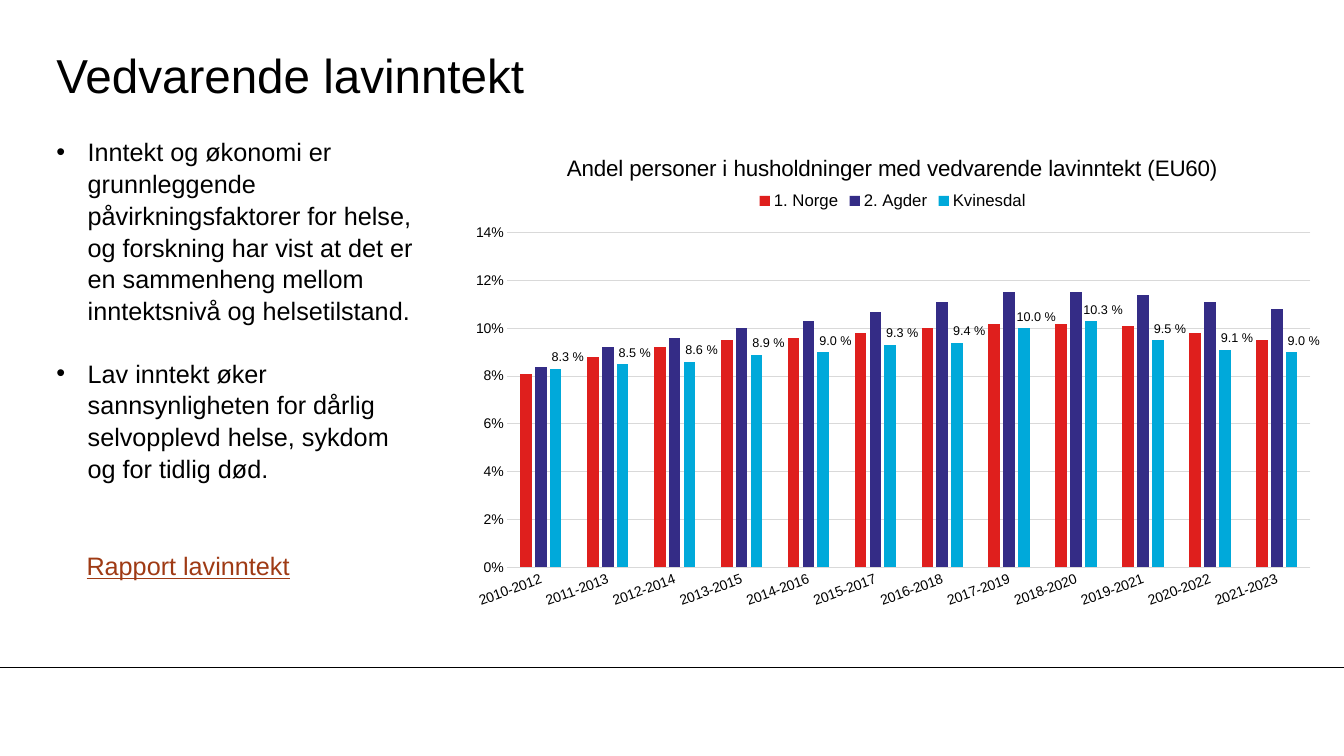
from dataclasses import dataclass

import pptx
import pptx.chart.data
import pptx.dml.color
import pptx.enum.chart
import pptx.enum.shapes
import pptx.enum.text
import pptx.oxml
import pptx.oxml.ns
import pptx.util

Inches = pptx.util.Inches
Pt = pptx.util.Pt

FONT = "Arial"
COLORS = {
    "text": "000000",
    "link": "9F3A14",
    "grid": "D9D9D9",
    "norge": "DF1F1D",
    "agder": "342C86",
    "kvinesdal": "00A9DA",
}


@dataclass
class Series:
    name: str
    color: str
    percents: list[float]


SERIES = [
    Series("1. Norge", "norge",
           [8.1, 8.8, 9.2, 9.5, 9.6, 9.8, 10, 10.2, 10.2, 10.1, 9.8, 9.5]),
    Series("2. Agder", "agder",
           [8.4, 9.2, 9.6, 10, 10.3, 10.7, 11.1, 11.5, 11.5, 11.4, 11.1, 10.8]),
    Series("Kvinesdal", "kvinesdal",
           [8.3, 8.5, 8.6, 8.9, 9, 9.3, 9.4, 10, 10.3, 9.5, 9.1, 9]),
]
PERIODS = [f"{year}-{year + 2}" for year in range(2010, 2022)]
BULLETS = [
    "Inntekt og økonomi er grunnleggende påvirkningsfaktorer for helse, "
    "og forskning har vist at det er en sammenheng mellom inntektsnivå og helsetilstand.",
    "Lav inntekt øker sannsynligheten for dårlig selvopplevd helse, "
    "sykdom og for tidlig død.",
]


def rgb(key: str) -> pptx.dml.color.RGBColor:
    return pptx.dml.color.RGBColor.from_string(COLORS[key])


def set_all(obj, values: dict) -> None:
    for name, value in values.items():
        setattr(obj, name, value)


def set_font(font, size: float, color: str = "text", **extra) -> None:
    set_all(font, {"name": FONT, "size": Pt(size), "bold": False, **extra})
    font.color.rgb = rgb(color)


def place(sp, left: float, top: float, width: float, height: float) -> None:
    set_all(sp, {"left": Inches(left), "top": Inches(top),
                 "width": Inches(width), "height": Inches(height)})


def add_bullet(p) -> None:
    pPr = p._p.get_or_add_pPr()
    pPr.set("marL", str(Inches(0.31)))
    pPr.set("indent", str(-Inches(0.31)))
    pPr.append(pptx.oxml.parse_xml(
        f'<a:buChar {pptx.oxml.ns.nsdecls("a")} char="•"/>'))


def make_layout(target: str = "", mode: str = "edge", **sizes: float):
    inner = f'<c:layoutTarget val="{target}"/>' if target else ""
    if mode == "edge":
        inner += '<c:xMode val="edge"/><c:yMode val="edge"/>'
    inner += "".join(f'<c:{k} val="{v}"/>' for k, v in sizes.items())
    return pptx.oxml.parse_xml(
        f'<c:layout {pptx.oxml.ns.nsdecls("c")}>'
        f"<c:manualLayout>{inner}</c:manualLayout></c:layout>")


def set_layout(parent, before: str, layout) -> None:
    for old in parent.xpath("c:layout"):
        parent.remove(old)
    parent.xpath(before)[0].addprevious(layout)


def add_title(slide) -> None:
    sp = slide.shapes.title
    place(sp, 0.56, 0.36, 11.1, 0.75)
    tf = sp.text_frame
    tf.text = "Vedvarende lavinntekt"
    set_all(tf, {"margin_left": 0, "margin_right": 0, "margin_top": 0,
                 "margin_bottom": 0, "word_wrap": True,
                 "auto_size": pptx.enum.text.MSO_AUTO_SIZE.NONE,
                 "vertical_anchor": pptx.enum.text.MSO_ANCHOR.MIDDLE})
    p = tf.paragraphs[0]
    p.alignment = pptx.enum.text.PP_ALIGN.LEFT
    set_font(p.runs[0].font, 34)


def add_body(slide) -> None:
    sp = slide.placeholders[1]
    place(sp, 0.46, 1.29, 3.83, 3.43)
    tf = sp.text_frame
    tf.auto_size = pptx.enum.text.MSO_AUTO_SIZE.NONE
    for i, text in enumerate(BULLETS):
        p = tf.add_paragraph() if i else tf.paragraphs[0]
        add_bullet(p)
        set_all(p, {"line_spacing": 1.05, "space_before": Pt(22 if i else 0)})
        r = p.add_run()
        r.text = text
        set_font(r.font, 18)


def add_report(slide) -> None:
    sp = slide.shapes.add_textbox(Inches(0.76), Inches(5.4), Inches(2.65), Inches(0.4))
    tf = sp.text_frame
    tf.word_wrap = True
    p = tf.paragraphs[0]
    p.line_spacing = 1.05
    r = p.add_run()
    r.text = "Rapport lavinntekt"
    set_font(r.font, 18, "link", underline=True)


def add_rule(slide) -> None:
    line = slide.shapes.add_connector(
        pptx.enum.shapes.MSO_CONNECTOR.STRAIGHT,
        0, Inches(6.62), Inches(13.33), Inches(6.62))
    line.line.color.rgb = rgb("text")
    line.line.width = Pt(0.75)
    line._element.spPr.append(pptx.oxml.parse_xml(
        f'<a:effectLst {pptx.oxml.ns.nsdecls("a")}/>'))


def format_axes(chart) -> None:
    tick = pptx.enum.chart.XL_TICK_MARK.NONE
    cat, val = chart.category_axis, chart.value_axis
    for axis in (cat, val):
        set_all(axis, {"major_tick_mark": tick, "minor_tick_mark": tick})
        set_font(axis.tick_labels.font, 10)
    set_all(val, {"minimum_scale": 0, "maximum_scale": 0.14, "major_unit": 0.02})
    set_all(val.tick_labels, {"number_format": "0%", "number_format_is_linked": False})
    val.format.line.fill.background()
    for line in (cat.format.line, val.major_gridlines.format.line):
        line.color.rgb = rgb("grid")
        line.width = Pt(0.75)
    # Slanted period labels, in 60000ths of a degree
    cat._element.xpath("c:txPr/a:bodyPr")[0].set("rot", str(-20 * 60000))


def add_labels(series) -> None:
    outside = pptx.enum.chart.XL_LABEL_POSITION.OUTSIDE_END
    labels = series.data_labels
    set_font(labels.font, 9)
    set_all(labels, {"show_value": True, "number_format": r"0.0\ %",
                     "number_format_is_linked": False, "position": outside})
    for i in range(len(PERIODS)):
        label = series.points[i].data_label
        set_font(label.font, 9)
        label.position = outside
    # Nudge each label to the right of its column
    for dLbl in series._element.xpath("c:dLbls/c:dLbl"):
        dLbl.insert(1, make_layout(mode="factor", x=0.014, y=0))


def add_chart(slide) -> None:
    kinds = pptx.enum.chart
    data = pptx.chart.data.CategoryChartData(number_format="0.0%")
    data.categories = PERIODS
    for s in SERIES:
        data.add_series(s.name, [round(v / 100, 3) for v in s.percents])
    chart = slide.shapes.add_chart(
        kinds.XL_CHART_TYPE.COLUMN_CLUSTERED,
        Inches(4.55), Inches(1.29), Inches(8.61), Inches(4.85), data).chart
    set_font(chart.font, 10)

    # Heading and legend
    tf = chart.chart_title.text_frame
    tf.text = "Andel personer i husholdninger med vedvarende lavinntekt (EU60)"
    set_font(tf.paragraphs[0].runs[0].font, 16)
    chart.has_legend = True
    set_all(chart.legend, {"position": kinds.XL_LEGEND_POSITION.TOP,
                           "include_in_layout": False})
    set_font(chart.legend.font, 12)
    set_layout(chart.chart_title._element, "c:overlay", make_layout(x=0.12, y=0.04))
    set_layout(chart.legend._element, "c:overlay",
               make_layout(x=0.34, y=0.12, w=0.32, h=0.05))

    # Columns
    plot = chart.plots[0]
    set_all(plot, {"gap_width": 219, "overlap": -27, "vary_by_categories": False})
    for series, s in zip(plot.series, SERIES):
        series.format.fill.solid()
        series.format.fill.fore_color.rgb = rgb(s.color)
    add_labels(plot.series[2])
    format_axes(chart)
    set_layout(chart._chartSpace.xpath("c:chart/c:plotArea")[0], "c:barChart",
               make_layout("inner", x=0.056, y=0.21, w=0.925, h=0.685))


def main() -> None:
    prs = pptx.Presentation()
    set_all(prs, {"slide_width": Inches(13.33), "slide_height": Inches(7.5)})
    slide = prs.slides.add_slide(prs.slide_layouts[1])
    add_rule(slide)
    add_title(slide)
    add_body(slide)
    add_report(slide)
    add_chart(slide)
    prs.save("out.pptx")


if __name__ == "__main__":
    main()
